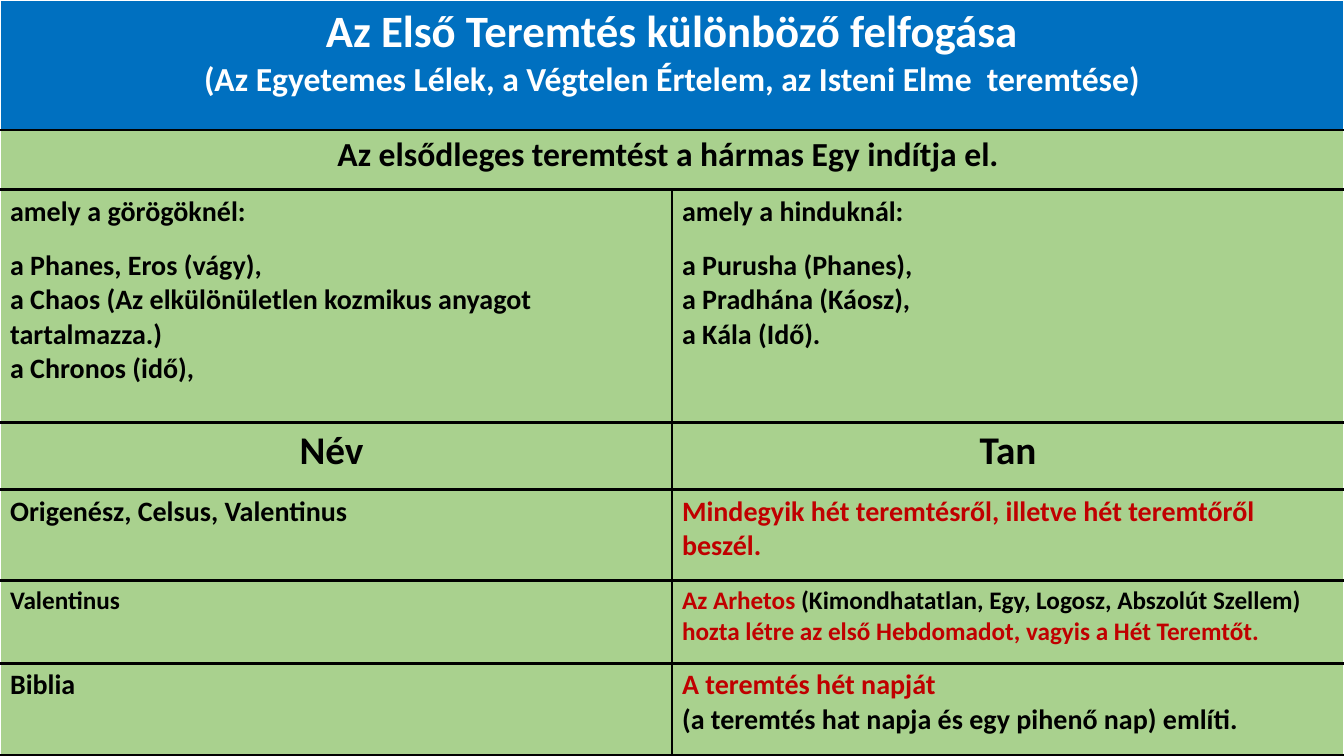
import pptx
import pptx.dml.color
import pptx.enum.text
import pptx.oxml
import pptx.oxml.ns
import pptx.util

COLOURS = {"page": "D6F3FD", "title": "0070C0", "body": "A9D18E",
           "white": "FFFFFF", "black": "000000", "red": "C00000"}
WIDTH, HEIGHT = 13.33, 7.5
ROW_HEIGHTS = [1.29, 0.59, 2.31, 0.67, 0.9, 0.82, 0.92]
GAP = 14.4

TITLE = [
    [("Az Első Teremtés különböző felfogása", "white", 32)],
    [("(Az Egyetemes Lélek, a Végtelen Értelem, az Isteni Elme  teremtése)", "white", 24)],
]
SUBTITLE = [[("Az elsődleges teremtést a hármas Egy indítja el. ", "black", 24)]]
GREEKS = ["amely a görögöknél:", "a Phanes, Eros (vágy),",
          "a Chaos (Az elkülönületlen kozmikus anyagot tartalmazza.)", "a Chronos (idő),"]
HINDUS = ["amely a hinduknál:", "a Purusha (Phanes),", "a Pradhána (Káosz),"]
KALA = [("a Kála (Idő)", "black", 20), (".", "black", 20, True)]
HEADINGS = ["Név ", "Tan"]
TEACHINGS = [
    ([[("Origenész, Celsus, Valentinus", "black", 20)]],
     [[("Mindegyik hét teremtésről, illetve hét teremtőről beszél.", "red", 20)]]),
    ([[("Valentinus", "black", 18)]],
     [[("Az Arhetos ", "red", 18),
       ("(Kimondhatatlan, Egy, Logosz, Abszolút Szellem) ", "black", 18),
       ("hozta létre az első Hebdomadot, vagyis a Hét Teremtőt.", "red", 18)]]),
    ([[("Biblia", "black", 20)]],
     [[("A teremtés hét napját", "red", 20)],
      [("(a teremtés hat napja és egy pihenő nap) említi.", "black", 20)]]),
]


def rgb(name):
    """Return the named colour as an RGBColor."""
    return pptx.dml.color.RGBColor.from_string(COLOURS[name])


def set_borders(cell, row, column):
    """Draw white lines on the outer sides and black lines elsewhere."""
    last_column = column == 1 or cell.is_merge_origin
    white_sides = {"L": column == 0, "R": last_column, "T": row == 0, "B": False}
    for position, (side, is_white) in enumerate(white_sides.items()):
        colour, points = ("white", 1) if is_white else ("black", 2.25)
        line = pptx.oxml.parse_xml(
            f'<a:ln{side} {pptx.oxml.ns.nsdecls("a")} w="{pptx.util.Pt(points)}">'
            f'<a:solidFill><a:srgbClr val="{COLOURS[colour]}"/></a:solidFill></a:ln{side}>')
        cell._tc.get_or_add_tcPr().insert(position, line)


def write_cell(cell, paragraphs, centred=False, gap=0):
    """Write paragraphs of spans, with a gap below the first one."""
    frame = cell.text_frame
    for index, spans in enumerate(paragraphs):
        para = frame.add_paragraph() if index else frame.paragraphs[0]
        if centred:
            para.alignment = pptx.enum.text.PP_ALIGN.CENTER
        if gap and index == 0:
            para.space_after = pptx.util.Pt(gap)
        for text, colour, size, *italic in spans:
            span = para.add_run()
            span.text = text
            formats = {"name": "Calibri", "size": pptx.util.Pt(size),
                       "bold": True, "italic": bool(italic)}
            for name, value in formats.items():
                setattr(span.font, name, value)
            span.font.color.rgb = rgb(colour)


def add_creation_table(page, left, top, width, height):
    """Fill the given box with the table of creation teachings."""
    box = page.shapes.add_table(
        len(ROW_HEIGHTS), 2, *map(pptx.util.Inches, (left, top, width, height)))
    table = box.table
    for column in table.columns:
        column.width = pptx.util.Inches(width / 2)
    for row, share in zip(table.rows, ROW_HEIGHTS):
        row.height = pptx.util.Inches(height * share / sum(ROW_HEIGHTS))
    for row in range(2):
        table.cell(row, 0).merge(table.cell(row, 1))
    for row in range(len(ROW_HEIGHTS)):
        for column in range(2):
            cell = table.cell(row, column)
            cell.fill.solid()
            cell.fill.fore_color.rgb = rgb("body" if row else "title")
            set_borders(cell, row, column)

    write_cell(table.cell(0, 0), TITLE, centred=True)
    write_cell(table.cell(1, 0), SUBTITLE, centred=True)
    greeks, hindus = ([[(line, "black", 20)] for line in lines] for lines in (GREEKS, HINDUS))
    for column, paragraphs in enumerate((greeks, hindus + [KALA])):
        write_cell(table.cell(2, column), paragraphs, gap=GAP)
        write_cell(table.cell(3, column), [[(HEADINGS[column], "black", 28)]], centred=True)
    for row, teaching in enumerate(TEACHINGS, start=4):
        for column, paragraphs in enumerate(teaching):
            write_cell(table.cell(row, column), paragraphs)


def main():
    """Build the slide and save it."""
    deck = pptx.Presentation()
    deck.slide_width = pptx.util.Inches(WIDTH)
    deck.slide_height = pptx.util.Inches(HEIGHT)
    page = deck.slides.add_slide(deck.slide_layouts[6])
    page.background.fill.solid()
    page.background.fill.fore_color.rgb = rgb("page")
    add_creation_table(page, 0, 0, WIDTH, HEIGHT)
    deck.save("out.pptx")


if __name__ == "__main__":
    main()
